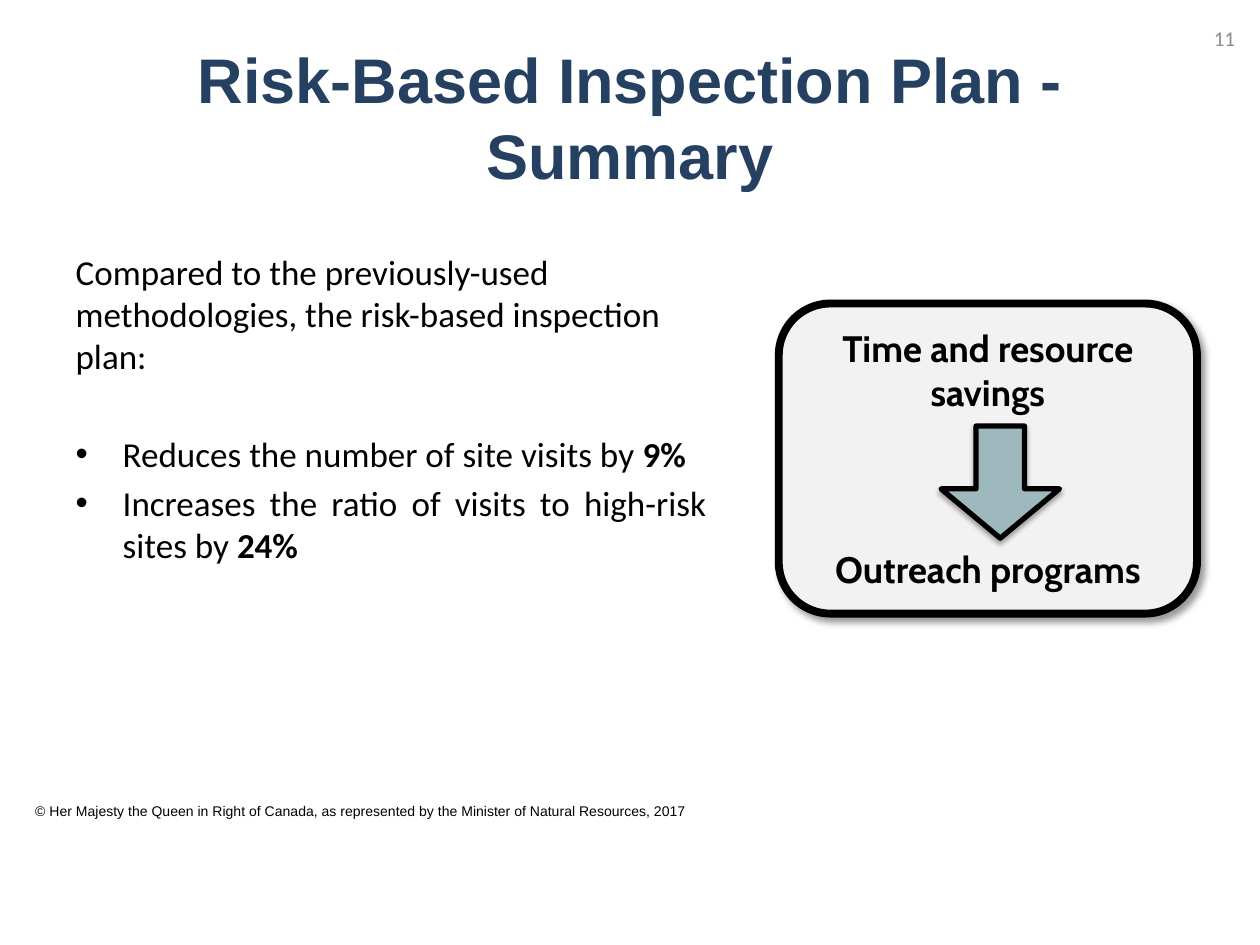
import pptx
import pptx.util
import pptx.dml.color
import pptx.enum.shapes
import pptx.enum.text
import pptx.oxml.ns
from lxml import etree

Cm, Pt = pptx.util.Cm, pptx.util.Pt
Align = pptx.enum.text.PP_ALIGN
Anchor = pptx.enum.text.MSO_ANCHOR
Preset = pptx.enum.shapes.MSO_SHAPE

COLOURS = {
    "navy": "254061",
    "black": "000000",
    "panel": "F2F2F2",
    "teal": "9EB9BE",
    "grey": "8C8C8C",
}


def colour(name):
    return pptx.dml.color.RGBColor.from_string(COLOURS[name])


def add_element(parent, tag, **attributes):
    element = etree.SubElement(parent, pptx.oxml.ns.qn(tag))
    for name, value in attributes.items():
        element.set(name, str(value))
    return element


class SummarySlide:
    """Holds the text styles and the current slide."""

    styles = {
        "title": {"name": "Arial", "size": Pt(36), "bold": True, "colour": "navy"},
        "body": {"name": "Calibri", "size": Pt(20), "bold": False, "colour": "black"},
        "panel": {"name": "Cabin", "size": Pt(21), "bold": True, "colour": "black"},
        "copyright": {"name": "Arial", "size": Pt(8), "bold": False, "colour": "black"},
        "number": {"name": "Calibri", "size": Pt(12), "bold": False, "colour": "grey"},
    }

    def __init__(self, presentation):
        self.slide = presentation.slides.add_slide(presentation.slide_layouts[1])

    def add_run(self, paragraph, text, style, **changes):
        run = paragraph.add_run()
        run.text = text
        for name, value in {**self.styles[style], **changes}.items():
            if name == "colour":
                run.font.color.rgb = colour(value)
            else:
                setattr(run.font, name, value)

    def prepare(self, shape, anchor):
        frame = shape.text_frame
        settings = {
            "word_wrap": True,
            "auto_size": pptx.enum.text.MSO_AUTO_SIZE.NONE,
            "vertical_anchor": anchor,
        }
        for name, value in settings.items():
            setattr(frame, name, value)
        return frame

    def place(self, shape, box):
        for name, value in zip(("left", "top", "width", "height"), box):
            setattr(shape, name, Cm(value))

    def title(self, text, box):
        shape = self.slide.shapes.title
        self.place(shape, box)
        paragraph = self.prepare(shape, Anchor.MIDDLE).paragraphs[0]
        paragraph.alignment = Align.CENTER
        self.add_run(paragraph, text, "title")

    def body(self, intro, bullets, box):
        shape = self.slide.placeholders[1]
        self.place(shape, box)
        frame = self.prepare(shape, Anchor.TOP)

        paragraph = frame.paragraphs[0]
        properties = paragraph._p.get_or_add_pPr()
        properties.set("marL", "0")
        properties.set("indent", "0")
        add_element(properties, "a:buNone")
        paragraph.space_before = Pt(0)
        self.add_run(paragraph, intro, "body")

        for index, (text, figure) in enumerate(bullets):
            paragraph = frame.add_paragraph()
            properties = paragraph._p.get_or_add_pPr()
            properties.set("marL", str(Cm(0.95)))
            properties.set("indent", str(-Cm(0.95)))
            add_element(properties, "a:buFont", typeface="Arial")
            add_element(properties, "a:buChar", char="•")
            paragraph.alignment = Align.JUSTIFY
            paragraph.space_before = Pt(4 if index else 32)
            self.add_run(paragraph, text, "body")
            self.add_run(paragraph, figure, "body", bold=True)

    def text(self, text, style, box, alignment=Align.LEFT, anchor=Anchor.TOP):
        shape = self.slide.shapes.add_textbox(*map(Cm, box))
        paragraph = self.prepare(shape, anchor).paragraphs[0]
        paragraph.alignment = alignment
        self.add_run(paragraph, text, style)

    def shape(self, preset, box, fill, line_width, shadow):
        shape = self.slide.shapes.add_shape(preset, *map(Cm, box))
        shape.fill.solid()
        shape.fill.fore_color.rgb = colour(fill)
        shape.line.color.rgb = colour("black")
        shape.line.width = Pt(line_width)
        # Outer shadow: opacity in percent, blur and distance in points, angle
        opacity, blur, distance, angle = shadow
        shape.shadow.inherit = False
        effects = shape._element.spPr.find(pptx.oxml.ns.qn("a:effectLst"))
        outer = add_element(effects, "a:outerShdw", blurRad=Pt(blur), dist=Pt(distance),
                            dir=angle * 60000, algn="tl", rotWithShape=0)
        shade = add_element(outer, "a:srgbClr", val=COLOURS["black"])
        add_element(shade, "a:alpha", val=opacity * 1000)
        return shape

    def panel(self, lines, box, gap):
        shape = self.shape(Preset.ROUNDED_RECTANGLE, box, "panel", 4.5, (40, 4, 3, 45))
        frame = self.prepare(shape, Anchor.MIDDLE)
        for index, line in enumerate(lines):
            paragraph = frame.add_paragraph() if index else frame.paragraphs[0]
            paragraph.alignment = Align.CENTER
            paragraph.space_before = Pt(gap if index else 0)
            self.add_run(paragraph, line, "panel")

    def down_arrow(self, box):
        shape = self.shape(Preset.DOWN_ARROW, box, "teal", 3, (35, 3.1, 1.8, 90))
        shape.adjustments[0] = 0.41
        shape.adjustments[1] = 0.44


def main():
    presentation = pptx.Presentation()
    presentation.slide_width = Cm(25.4)
    presentation.slide_height = Cm(19.05)
    summary = SummarySlide(presentation)

    # Copyright line
    summary.text(
        "© Her Majesty the Queen in Right of Canada, as represented by "
        "the Minister of Natural Resources, 2017",
        "copyright", (0.46, 16.05, 13.82, 0.94))

    # Title and findings
    summary.title("Risk-Based Inspection Plan - Summary", (1.27, 0.76, 22.86, 3.18))
    summary.body(
        "Compared to the previously-used methodologies, the risk-based inspection plan:",
        [("Reduces the number of site visits by ", "9%"),
         ("Increases the ratio of visits to high-risk sites by ", "24%")],
        (1.27, 4.93, 13.23, 9.19))

    # Savings lead to outreach
    summary.panel(["Time and resource savings", "Outreach programs"],
                  (15.7, 6.12, 8.43, 6.25), gap=76)
    summary.down_arrow((18.97, 8.59, 2.39, 2.26))

    # Slide number
    summary.text("11", "number", (23.85, 0.25, 1.3, 1.02), Align.RIGHT, Anchor.MIDDLE)

    presentation.save("out.pptx")


if __name__ == "__main__":
    main()
